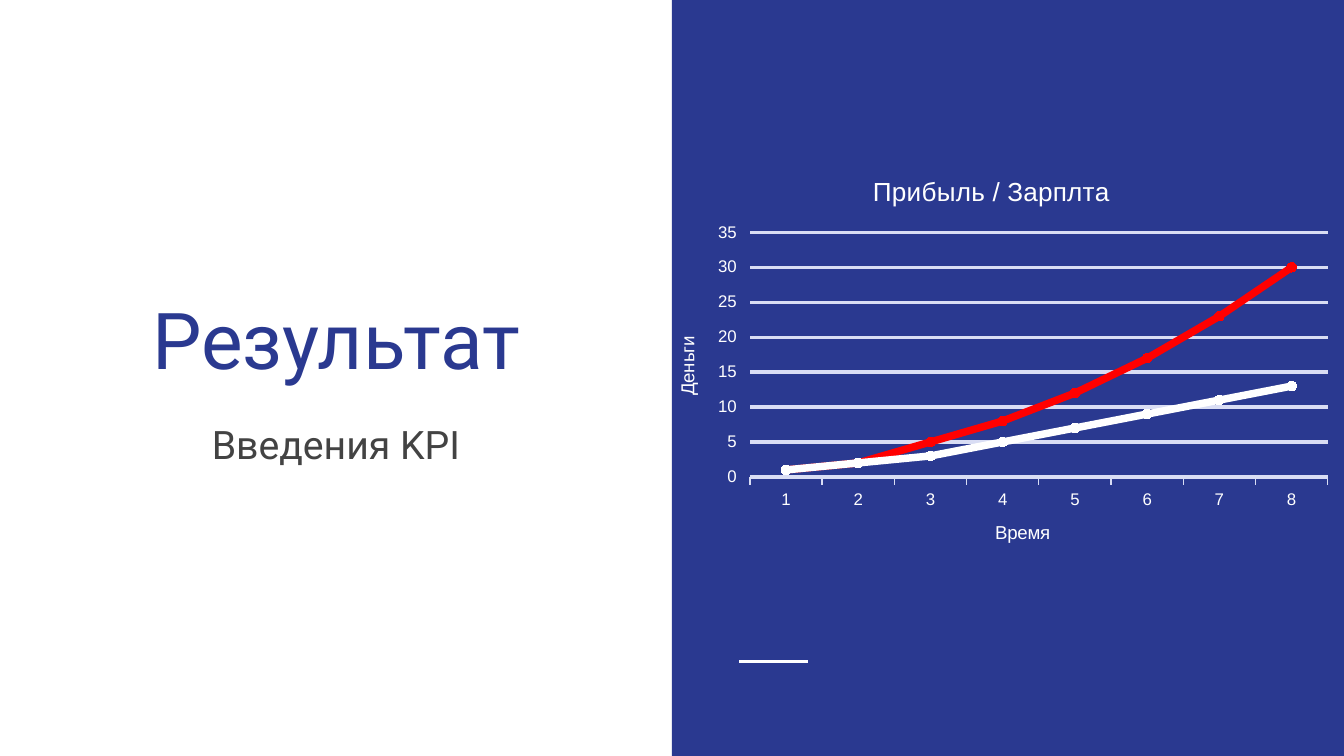
import pptx
import pptx.chart.data
import pptx.dml.color
import pptx.enum.chart
import pptx.enum.shapes
import pptx.enum.text
import pptx.oxml
import pptx.oxml.ns
import pptx.util
from lxml import etree
from pptx.util import Inches

COLORS = {"blue": "2A3990", "white": "FFFFFF", "gray": "434343",
          "grid": "D9DDF4", "red": "FF0000"}

SLIDE_WIDTH = Inches(10)
SLIDE_HEIGHT = SLIDE_WIDTH * 9 // 16
HEADINGS = [
    ("Результат", (0.29, 1.26, 4.42, 1.71), 42, "blue", "BOTTOM"),
    ("Введения KPI", (0.29, 3.03, 4.42, 1.39), 21, "gray", "TOP"),
]
CHART_TITLE = "Прибыль / Зарплта"
TIME_TITLE = "Время"
MONEY_TITLE = "Деньги"
PERIODS = ["1", "2", "3", "4", "5", "6", "7", "8"]
SERIES = [
    ("Series 1", (1, 2, 5, 8, 12, 17, 23, 30), "red"),
    ("Series 2", (1, 2, 3, 5, 7, 9, 11, 13), "white"),
]
CHART_BOX = (4.82, 1.14, 5.17, 3.11)
PLOT_BOX = (5.58, 1.73, 4.3, 1.82)


def rgb(name):
    return pptx.dml.color.RGBColor.from_string(COLORS[name])


def style_font(font, size, color, family="Arial"):
    font.size = pptx.util.Pt(size)
    font.name = family
    font.bold = False
    font.color.rgb = rgb(color)


def style_line(line, color, width):
    line.color.rgb = rgb(color)
    line.width = pptx.util.Pt(width)


def place(element, index, left, top, width=None, height=None):
    qn = pptx.oxml.ns.qn
    layout = element.find(qn("c:layout"))
    if layout is None:
        layout = etree.Element(qn("c:layout"))
        element.insert(index, layout)
    manual = etree.SubElement(layout, qn("c:manualLayout"))
    chart_left, chart_top, chart_width, chart_height = CHART_BOX
    settings = [("xMode", "edge"), ("yMode", "edge"),
                ("x", (left - chart_left) / chart_width),
                ("y", (top - chart_top) / chart_height)]
    if width:
        settings.insert(0, ("layoutTarget", "inner"))
        settings += [("w", width / chart_width), ("h", height / chart_height)]
    for tag, value in settings:
        etree.SubElement(manual, qn("c:" + tag)).set("val", str(value))


def add_title(owner, text, size, left, top):
    owner.has_title = True
    title = owner.chart_title if hasattr(owner, "chart_title") else owner.axis_title
    title.text_frame.text = text
    style_font(title.text_frame.paragraphs[0].runs[0].font, size, "white")
    place(title.element, 1, left, top)


def add_background(slide):
    half = SLIDE_WIDTH // 2
    panel = slide.shapes.add_shape(
        pptx.enum.shapes.MSO_SHAPE.RECTANGLE, half, 0, half, SLIDE_HEIGHT)
    panel.shadow.inherit = False
    panel.fill.solid()
    panel.fill.fore_color.rgb = rgb("blue")
    panel.line.fill.background()
    accent = slide.shapes.add_connector(
        pptx.enum.shapes.MSO_CONNECTOR.STRAIGHT,
        Inches(5.5), Inches(4.92), Inches(6.01), Inches(4.92))
    style_line(accent.line, "white", 1.5)
    etree.SubElement(accent.element.spPr, pptx.oxml.ns.qn("a:effectLst"))


def fill_headings(slide):
    for placeholder, (text, box, size, color, anchor) in zip(slide.placeholders, HEADINGS):
        placeholder.left, placeholder.top, placeholder.width, placeholder.height = map(Inches, box)
        frame = placeholder.text_frame
        frame.text = text
        frame.word_wrap = True
        frame.auto_size = pptx.enum.text.MSO_AUTO_SIZE.NONE
        frame.vertical_anchor = pptx.enum.text.MSO_ANCHOR[anchor]
        frame.margin_left = frame.margin_right = Inches(0.1)
        frame.margin_top = frame.margin_bottom = Inches(0.1)
        paragraph = frame.paragraphs[0]
        paragraph.alignment = pptx.enum.text.PP_ALIGN.CENTER
        paragraph.space_before = pptx.util.Pt(0)
        style_font(paragraph.runs[0].font, size, color, "Roboto")


def add_growth_chart(slide):
    growth = pptx.chart.data.CategoryChartData()
    growth.categories = PERIODS
    for name, values, _ in SERIES:
        growth.add_series(name, values)
    chart = slide.shapes.add_chart(
        pptx.enum.chart.XL_CHART_TYPE.LINE_MARKERS, *map(Inches, CHART_BOX), growth).chart
    chart.has_legend = False
    style_font(chart.font, 10, "white")
    add_title(chart, CHART_TITLE, 14, 6.46, 1.26)

    time_axis, money_axis = chart.category_axis, chart.value_axis
    add_title(time_axis, TIME_TITLE, 10, 7.38, 3.85)
    add_title(money_axis, MONEY_TITLE, 10, 5, 2.48)
    for axis in (time_axis, money_axis):
        axis.major_tick_mark = pptx.enum.chart.XL_TICK_MARK.OUTSIDE
        axis.minor_tick_mark = pptx.enum.chart.XL_TICK_MARK.NONE
        style_font(axis.tick_labels.font, 9, "white")
    style_line(time_axis.format.line, "grid", 0.75)
    money_axis.format.line.fill.background()
    money_axis.minimum_scale, money_axis.maximum_scale = 0, 35
    money_axis.major_unit = 5
    style_line(money_axis.major_gridlines.format.line, "grid", 1.75)

    plot = chart.plots[0]
    plot.vary_by_categories = False
    for series, (_, _, color) in zip(plot.series, SERIES):
        series.smooth = False
        style_line(series.format.line, color, 4)
        marker = series.marker
        marker.style = pptx.enum.chart.XL_MARKER_STYLE.CIRCLE
        marker.size = 5
        marker.format.fill.solid()
        marker.format.fill.fore_color.rgb = rgb(color)
        marker.format.line.color.rgb = rgb(color)
    plot_area = chart.element.find(".//" + pptx.oxml.ns.qn("c:plotArea"))
    place(plot_area, 0, *PLOT_BOX)


def main():
    deck = pptx.Presentation()
    deck.slide_width, deck.slide_height = SLIDE_WIDTH, SLIDE_HEIGHT
    slide = deck.slides.add_slide(deck.slide_layouts[0])
    add_background(slide)
    fill_headings(slide)
    add_growth_chart(slide)
    deck.save("out.pptx")


if __name__ == "__main__":
    main()
